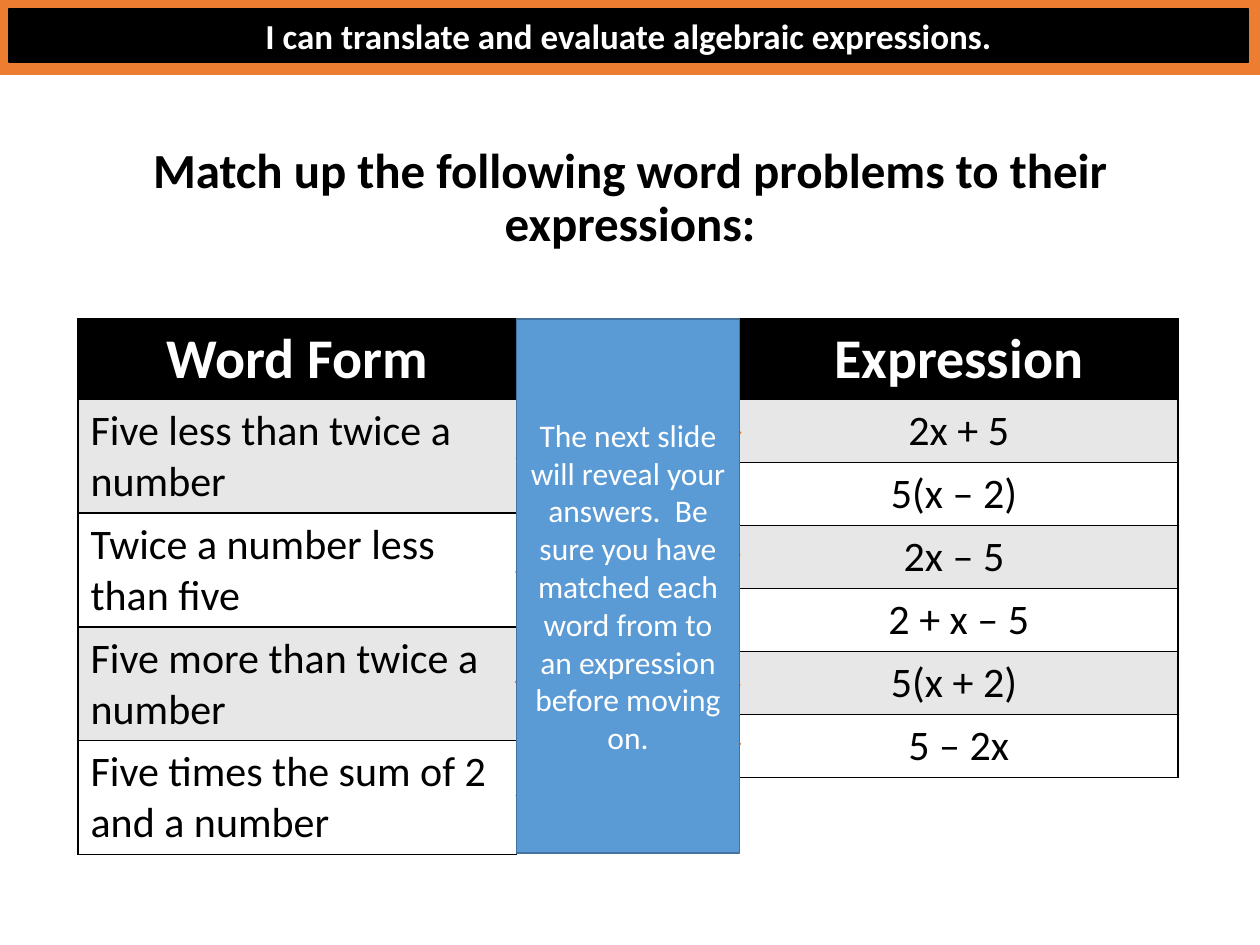
from lxml import etree
from pptx import Presentation
from pptx import util as u
from pptx.dml.color import RGBColor
from pptx.enum import shapes, text
from pptx.oxml.ns import qn

COLOURS = {
    "ink": "000000",
    "paper": "FFFFFF",
    "band": "E7E7E7",
    "orange": "ED7D31",
    "blue": "5B9BD5",
    "blue edge": "43739E",
}
CENTRE, LEFT = text.PP_ALIGN.CENTER, text.PP_ALIGN.LEFT

TOP, HEADER = 182.2, 46
WORDS_LEFT, EXPRESSIONS_LEFT, COLUMN = 44.6, 422.6, 250.6
WORDS_RIGHT = WORDS_LEFT + COLUMN
WORD_ROW, EXPRESSION_ROW = 65, 36

WORD_FORMS = [
    "Five less than twice a number",
    "Twice a number less than five",
    "Five more than twice a number",
    "Five times the sum of 2 and a number",
]
EXPRESSIONS = ["2x + 5", "5(x – 2) ", "2x – 5 ", "2 + x – 5", "5(x + 2) ", "5 – 2x"]
ANSWERS = [2, 5, 0, 4]  # expression row that belongs to each word form


def rgb(name):
    return RGBColor.from_string(COLOURS[name])


def row_middle(index, height):
    return TOP + HEADER + (index + 0.5) * height


class Lesson:
    def __init__(self, deck, font="Calibri"):
        self.slide = deck.slides.add_slide(deck.slide_layouts[6])
        self.font = font

    def set_words(self, frame, words, size, colour, bold=False, align=CENTRE, **paragraph_format):
        frame.word_wrap = True
        paragraph = frame.paragraphs[0]
        for key, value in {"alignment": align, **paragraph_format}.items():
            setattr(paragraph, key, value)
        run = paragraph.add_run()
        run.text = words
        for key, value in {"name": self.font, "size": u.Pt(size), "bold": bold}.items():
            setattr(run.font, key, value)
        run.font.color.rgb = rgb(colour)

    def heading(self, box, words):
        frame = self.slide.shapes.add_textbox(*map(u.Pt, box)).text_frame
        frame.vertical_anchor = text.MSO_ANCHOR.MIDDLE
        frame.margin_bottom = u.Pt(42)
        self.set_words(frame, words, 28, "ink", bold=True, line_spacing=0.9)

    def panel(self, box, fill, edge, words=None, size=18, bold=False):
        panel = self.slide.shapes.add_shape(shapes.MSO_SHAPE.RECTANGLE, *map(u.Pt, box))
        panel.shadow.inherit = False
        panel.fill.solid()
        panel.fill.fore_color.rgb = rgb(fill)
        panel.line.color.rgb = rgb(edge)
        panel.line.width = u.Pt(1)
        if words:
            panel.text_frame.vertical_anchor = text.MSO_ANCHOR.MIDDLE
            self.set_words(panel.text_frame, words, size, "paper", bold)

    def match_line(self, start, end):
        line = self.slide.shapes.add_connector(
            shapes.MSO_CONNECTOR.STRAIGHT, *map(u.Pt, start + end))
        line.line.color.rgb = rgb("orange")
        line.line.width = u.Pt(3)
        etree.SubElement(line._element.spPr, qn("a:effectLst"))

    def border(self, cell):
        properties = cell._tc.get_or_add_tcPr()
        for position, side in enumerate(("lnL", "lnR", "lnT", "lnB")):
            edge = etree.Element(qn(f"a:{side}"), w=str(u.Pt(1)))
            fill = etree.SubElement(edge, qn("a:solidFill"))
            etree.SubElement(fill, qn("a:srgbClr"), val=COLOURS["ink"])
            properties.insert(position, edge)

    def column_table(self, left, title, entries, row_height, align):
        """Draw a one-column table with a black header and banded rows."""
        total = HEADER + row_height * len(entries)
        table = self.slide.shapes.add_table(
            len(entries) + 1, 1, *map(u.Pt, (left, TOP, COLUMN, total))).table
        for index, words in enumerate([title, *entries]):
            table.rows[index].height = u.Pt(row_height if index else HEADER)
            cell = table.cell(index, 0)
            cell.fill.solid()
            if index:
                cell.fill.fore_color.rgb = rgb("band" if index % 2 else "paper")
                self.set_words(cell.text_frame, words, 24, "ink", align=align)
            else:
                cell.fill.fore_color.rgb = rgb("ink")
                self.set_words(cell.text_frame, words, 32, "paper", bold=True)
            self.border(cell)


def main():
    deck = Presentation()
    deck.slide_width, deck.slide_height = u.Pt(720), u.Pt(540)
    lesson = Lesson(deck)

    lesson.heading((49.7, 39.6, 620.6, 187.2),
                   "Match up the following word problems to their expressions:")
    lesson.column_table(WORDS_LEFT, "Word Form", WORD_FORMS, WORD_ROW, LEFT)
    lesson.column_table(EXPRESSIONS_LEFT, "Expression", EXPRESSIONS, EXPRESSION_ROW, CENTRE)

    lesson.panel((0, 0, 720, 42.5), "orange", "orange")
    lesson.panel((5, 5, 708.5, 30.5), "ink", "ink",
                 "I can translate and evaluate algebraic expressions.", 20, bold=True)

    for word_row, expression_row in enumerate(ANSWERS):
        lesson.match_line((WORDS_RIGHT, row_middle(word_row, WORD_ROW)),
                          (EXPRESSIONS_LEFT, row_middle(expression_row, EXPRESSION_ROW)))
    lesson.panel((WORDS_RIGHT, TOP, EXPRESSIONS_LEFT - WORDS_RIGHT, 305.3), "blue", "blue edge",
                 "The next slide will reveal your answers.  Be sure you have matched "
                 "each word from to an expression before moving on.")
    deck.save("out.pptx")


if __name__ == "__main__":
    main()
